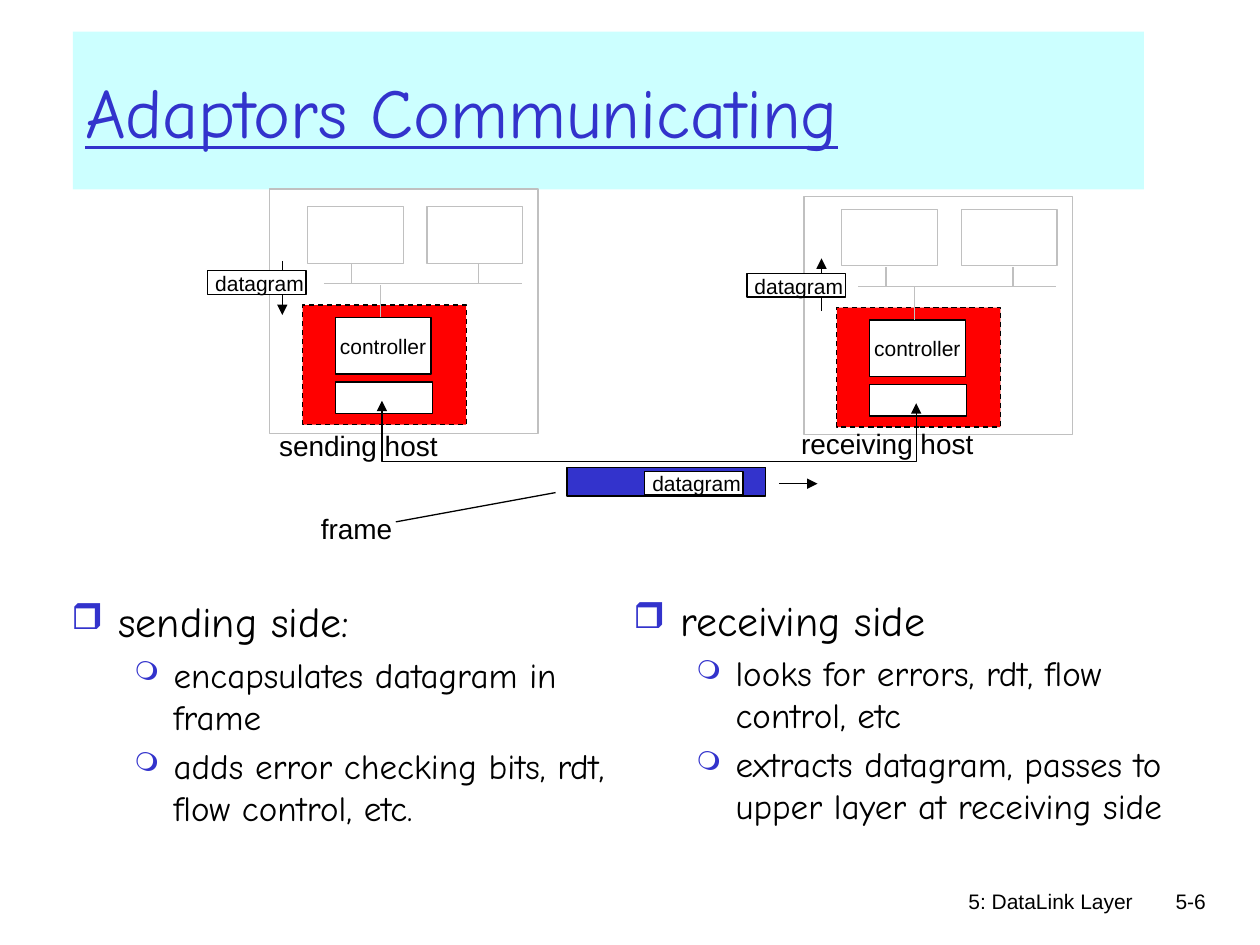
from lxml.etree import SubElement
from pptx import Presentation
from pptx.dml.color import RGBColor
from pptx.enum.dml import MSO_LINE
from pptx.enum.shapes import MSO_CONNECTOR, MSO_SHAPE
from pptx.enum.text import MSO_ANCHOR, MSO_AUTO_SIZE, PP_ALIGN
from pptx.oxml.ns import qn
from pptx.util import Cm, Pt

BLACK, WHITE, GRAY, BLUE, RED, CYAN = "000000", "FFFFFF", "C0C0C0", "3333CC", "FF0000", "CCFFFF"
color = RGBColor.from_string

prs = Presentation()
prs.slide_width, prs.slide_height = Cm(25.4), Cm(19.05)
s = prs.slides.add_slide(prs.slide_layouts[6])


def box(x, y, w, h, fill=None, line=None, text="", size=12, font="Arial", ink=BLACK,
        align=PP_ALIGN.LEFT, wrap=False):
    at = Cm(x), Cm(y), Cm(w), Cm(h)
    if fill:
        sp = s.shapes.add_shape(MSO_SHAPE.RECTANGLE, *at)
        sp.shadow.inherit = False
        sp.fill.solid()
        sp.fill.fore_color.rgb = color(fill)
        if line:
            sp.line.color.rgb = color(line)
            sp.line.width = Pt(0.75)
        else:
            sp.line.fill.background()
    else:
        sp = s.shapes.add_textbox(*at)
    tf = sp.text_frame
    tf.word_wrap = wrap
    if not fill and not wrap:
        tf.auto_size = MSO_AUTO_SIZE.SHAPE_TO_FIT_TEXT
    if text:
        tf.vertical_anchor = MSO_ANCHOR.MIDDLE if fill else MSO_ANCHOR.TOP
        tf.text = text
        p = tf.paragraphs[0]
        p.alignment = align
        f = p.runs[0].font
        f.size, f.name, f.color.rgb = Pt(size), font, color(ink)
    return sp


def wire(x1, y1, x2, y2, ink=BLACK, arrow=False):
    c = s.shapes.add_connector(MSO_CONNECTOR.STRAIGHT, Cm(x1), Cm(y1), Cm(x2), Cm(y2))
    c.line.color.rgb = color(ink)
    c.line.width = Pt(0.75)
    if arrow:
        SubElement(c.line._get_or_add_ln(), qn("a:tailEnd"), type="triangle")
    SubElement(c._element.spPr, qn("a:effectLst"))


box(15.04, 17.78, 8.05, 1.27, text="5: DataLink Layer", align=PP_ALIGN.RIGHT, wrap=True)
box(22.68, 17.78, 1.88, 1.27, text="5-6", align=PP_ALIGN.RIGHT, wrap=True)
title = box(1.47, 0.64, 21.59, 3.18, CYAN, None, "Adaptors Communicating", 40, "Comic Neue", BLUE, wrap=True)
title.text_frame.paragraphs[0].runs[0].font.underline = True

columns = [
    (1.19, 11.89, 11.3, ["sending side:", "encapsulates datagram in frame",
                         "adds error checking bits, rdt, flow control, etc."]),
    (12.52, 11.86, 11.35, ["receiving side", "looks for errors, rdt, flow control, etc",
                           "extracts datagram, passes to upper layer at receiving side"]),
]
for x, y, w, items in columns:
    tf = box(x, y, w, 5.2, wrap=True).text_frame
    for i, item in enumerate(items):
        p = tf.add_paragraph() if i else tf.paragraphs[0]
        p.text = item
        p.level = 1 if i else 0
        size, left, hang, bullet, scale = (20, 2.06, 0.79, "❍", 75) if i else (24, 0.95, 0.95, "❒", 85)
        p.space_before = Pt(size * 0.2)
        f = p.runs[0].font
        f.size, f.name, f.color.rgb = Pt(size), "Comic Neue", color(BLACK)
        pPr = p._p.get_or_add_pPr()
        pPr.set("marL", str(Cm(left)))
        pPr.set("indent", str(-Cm(hang)))
        SubElement(SubElement(pPr, qn("a:buClr")), qn("a:srgbClr"), val=BLUE)
        SubElement(pPr, qn("a:buSzPct"), val=str(scale * 1000))
        SubElement(pPr, qn("a:buChar"), char=bullet)

box(11.43, 9.42, 4.01, 0.58, BLUE, BLACK)

for dx, dy, top, height in [(0, 0, 3.81, 4.93), (10.77, 0.05, 3.96, 4.8)]:
    box(5.44 + dx, top, 5.41, height, WHITE, GRAY)
    adaptor = box(6.1 + dx, 6.15 + dy, 3.3, 2.41, RED, BLACK)
    adaptor.line.dash_style = MSO_LINE.DASH
    box(6.76 + dx, 7.7 + dy, 1.96, 0.64, WHITE, BLACK)
    box(6.76 + dx, 6.4 + dy, 1.93, 1.14, WHITE, BLACK, "controller", align=PP_ALIGN.CENTER)
    wire(6.53 + dx, 5.72 + dy, 10.52 + dx, 5.72 + dy, GRAY)
    wire(7.67 + dx, 6.4 + dy, 7.67 + dx, 5.74 + dy, GRAY)
    for unit_x, drop_x in [(6.2, 7.09), (8.61, 9.65)]:
        box(unit_x + dx, 4.17 + dy, 1.93, 1.14, WHITE, GRAY)
        wire(drop_x + dx, 5.72 + dy, drop_x + dx, 5.33 + dy, GRAY)

wire(5.69, 5.26, 5.69, 6.35, arrow=True)
wire(16.56, 6.27, 16.56, 5.21, arrow=True)

for x, y, w, label in [(5.38, 8.51, 3.71, "sending host"), (15.9, 8.48, 3.99, "receiving host"),
                       (6.22, 10.19, 1.96, "frame")]:
    box(x, y, w, 0.94, text=label, size=16)

fb = s.shapes.build_freeform(Cm(7.7), Cm(8.08))
fb.add_line_segments([(Cm(7.7), Cm(9.3)), (Cm(18.47), Cm(9.3)), (Cm(18.47), Cm(8.13))], close=False)
link = fb.convert_to_shape()
link.shadow.inherit = False
link.fill.background()
link.line.color.rgb = color(BLACK)
link.line.width = Pt(0.75)
for end in ("a:headEnd", "a:tailEnd"):
    SubElement(link.line._get_or_add_ln(), qn(end), type="triangle")

for x, y in [(4.19, 5.46), (15.06, 5.51), (13.0, 9.5)]:
    box(x, y, 1.98, 0.48, WHITE, BLACK)
    box(x - 0.1, y - 0.13, 2.29, 0.76, text="datagram")

wire(15.7, 9.75, 16.48, 9.75, arrow=True)
wire(7.98, 10.52, 11.2, 9.93)

prs.save("out.pptx")
